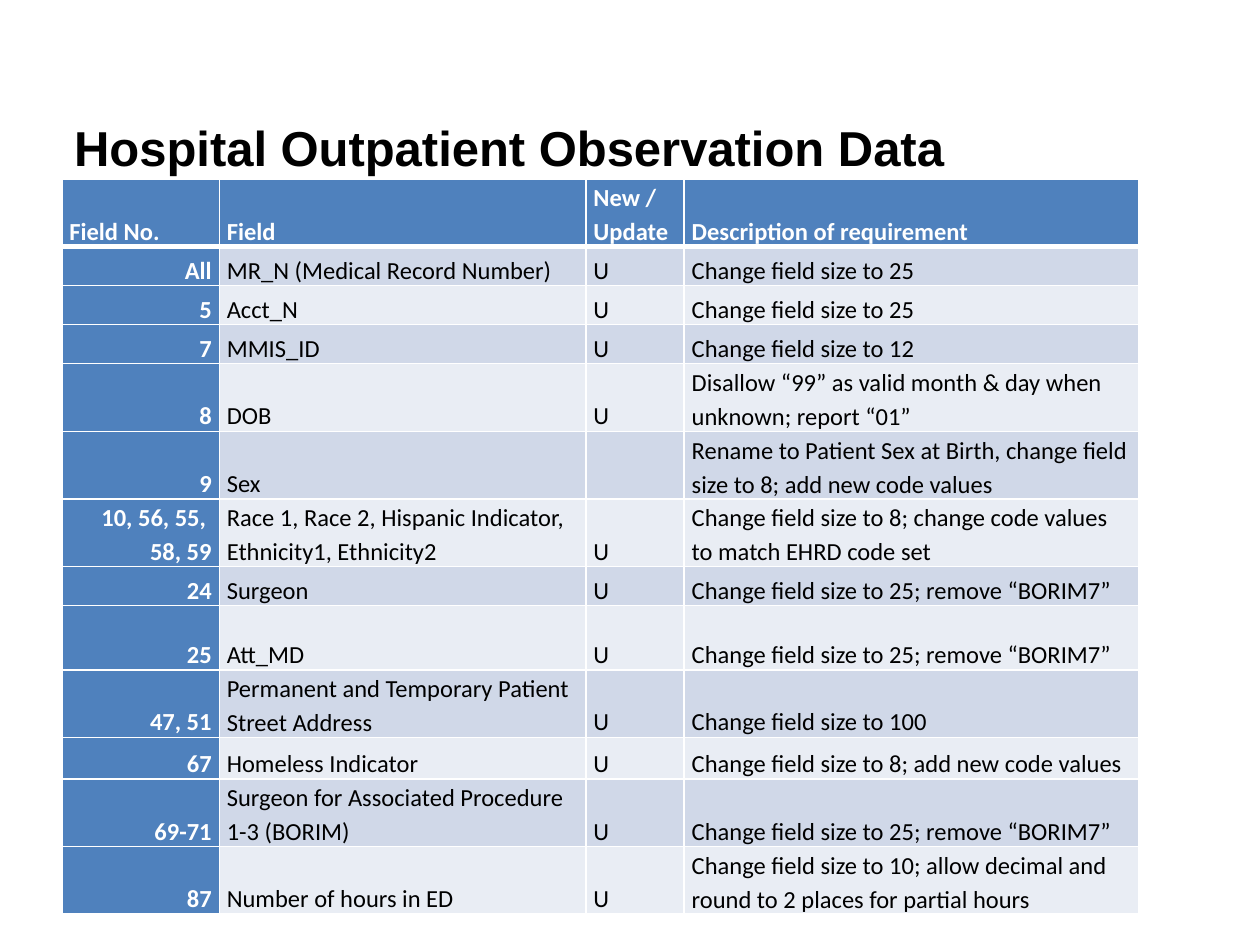
from lxml import etree
from pptx import Presentation
from pptx.dml.color import RGBColor
from pptx.enum.text import MSO_ANCHOR, PP_ALIGN
from pptx.oxml.ns import qn
from pptx.util import Inches, Pt

MIDDLE, BOTTOM = MSO_ANCHOR.MIDDLE, MSO_ANCHOR.BOTTOM
LEFT, RIGHT = PP_ALIGN.LEFT, PP_ALIGN.RIGHT

COLORS = {
    "text": "000000",
    "inverse": "FFFFFF",
    "accent": "4F81BD",
    "odd": "D0D8E8",
    "even": "E9EDF4",
}
COLUMN_WIDTHS = [1.25, 2.91, 0.78, 3.61]
SHORT, TALL = 0.31, 0.51
HEADER = ("Field No.", "Field", "New / Update", "Description of requirement")
REMOVE_BORIM = "Change field size to 25; remove “BORIM7”"
REQUIREMENTS = [
    (SHORT, "All", "MR_N (Medical Record Number)", "U", "Change field size to 25"),
    (SHORT, "5", "Acct_N", "U", "Change field size to 25"),
    (SHORT, "7", "MMIS_ID", "U", "Change field size to 12"),
    (TALL, "8", "DOB", "U", "Disallow “99” as valid month & day when unknown; report “01”"),
    (TALL, "9", "Sex", "",
     "Rename to Patient Sex at Birth, change field size to 8; add new code values"),
    (TALL, "10, 56, 55, \n58, 59", "Race 1, Race 2, Hispanic Indicator, Ethnicity1, Ethnicity2",
     "U", "Change field size to 8; change code values to match EHRD code set"),
    (SHORT, "24", "Surgeon", "U", REMOVE_BORIM),
    (TALL, "25", "Att_MD", "U", REMOVE_BORIM),
    (TALL, "47, 51", "Permanent and Temporary Patient Street Address", "U",
     "Change field size to 100"),
    (0.33, "67", "Homeless Indicator", "U", "Change field size to 8; add new code values"),
    (TALL, "69-71", "Surgeon for Associated Procedure 1-3 (BORIM)", "U", REMOVE_BORIM),
    (TALL, "87", "Number of hours in ED", "U",
     "Change field size to 10; allow decimal and round to 2 places for partial hours"),
]


class SlideBuilder:
    """Draws the title and the requirements table in one shared style."""

    def __init__(self, slide):
        self.slide = slide

    def style(self, paragraph, font_name, size, color, bold):
        font = paragraph.font
        font.name, font.size, font.bold = font_name, Pt(size), bold
        font.color.rgb = RGBColor.from_string(COLORS[color])

    def title(self, text, left, top, width, height):
        box = self.slide.shapes.add_textbox(
            Inches(left), Inches(top), Inches(width), Inches(height))
        frame = box.text_frame
        frame.word_wrap = True
        frame.vertical_anchor = MIDDLE
        frame.text = text
        self.style(frame.paragraphs[0], "Arial", 28, "text", True)

    def borders(self, cell, widths):
        properties = cell._tc.get_or_add_tcPr()
        for side, width in widths.items():
            line = etree.SubElement(properties, qn(f"a:ln{side}"), w=str(Pt(width)))
            fill = etree.SubElement(line, qn("a:solidFill"))
            etree.SubElement(fill, qn("a:srgbClr"), val=COLORS["inverse"])

    def cell(self, cell, text, fill, bold, align, widths):
        self.borders(cell, widths)
        cell.fill.solid()
        cell.fill.fore_color.rgb = RGBColor.from_string(COLORS[fill])
        cell.vertical_anchor = BOTTOM
        cell.margin_left = cell.margin_right = Inches(0.06)
        cell.margin_top = cell.margin_bottom = 0
        cell.text = text
        for paragraph in cell.text_frame.paragraphs:
            paragraph.alignment = align
            paragraph.line_spacing = 1.15
            self.style(paragraph, "Calibri", 14, "inverse" if bold else "text", bold)

    def table(self, left, top, rows):
        table = self.slide.shapes.add_table(
            len(rows), len(COLUMN_WIDTHS), Inches(left), Inches(top),
            Inches(sum(COLUMN_WIDTHS)), Inches(sum(row[0] for row in rows))).table
        table.first_col = True
        table.horz_banding = False
        for column, width in zip(table.columns, COLUMN_WIDTHS):
            column.width = Inches(width)
        for r, (height, *texts) in enumerate(rows):
            table.rows[r].height = Inches(height)
            widths = {"L": 1, "R": 1, "T": 3 if r == 1 else 1, "B": 3 if r == 0 else 1}
            for c, text in enumerate(texts):
                bold = r == 0 or c == 0
                fill = "accent" if bold else "odd" if r % 2 else "even"
                align = RIGHT if c == 0 and r > 0 else LEFT
                self.cell(table.cell(r, c), text, fill, bold, align, widths)


def main():
    presentation = Presentation()
    presentation.slide_width, presentation.slide_height = Inches(10), Inches(7.5)
    builder = SlideBuilder(presentation.slides.add_slide(presentation.slide_layouts[6]))
    builder.title("Hospital Outpatient Observation Data", 0.49, 0.74, 8.79, 0.86)
    builder.table(0.49, 1.42, [(TALL, *HEADER), *REQUIREMENTS])
    presentation.save("out.pptx")


if __name__ == "__main__":
    main()
